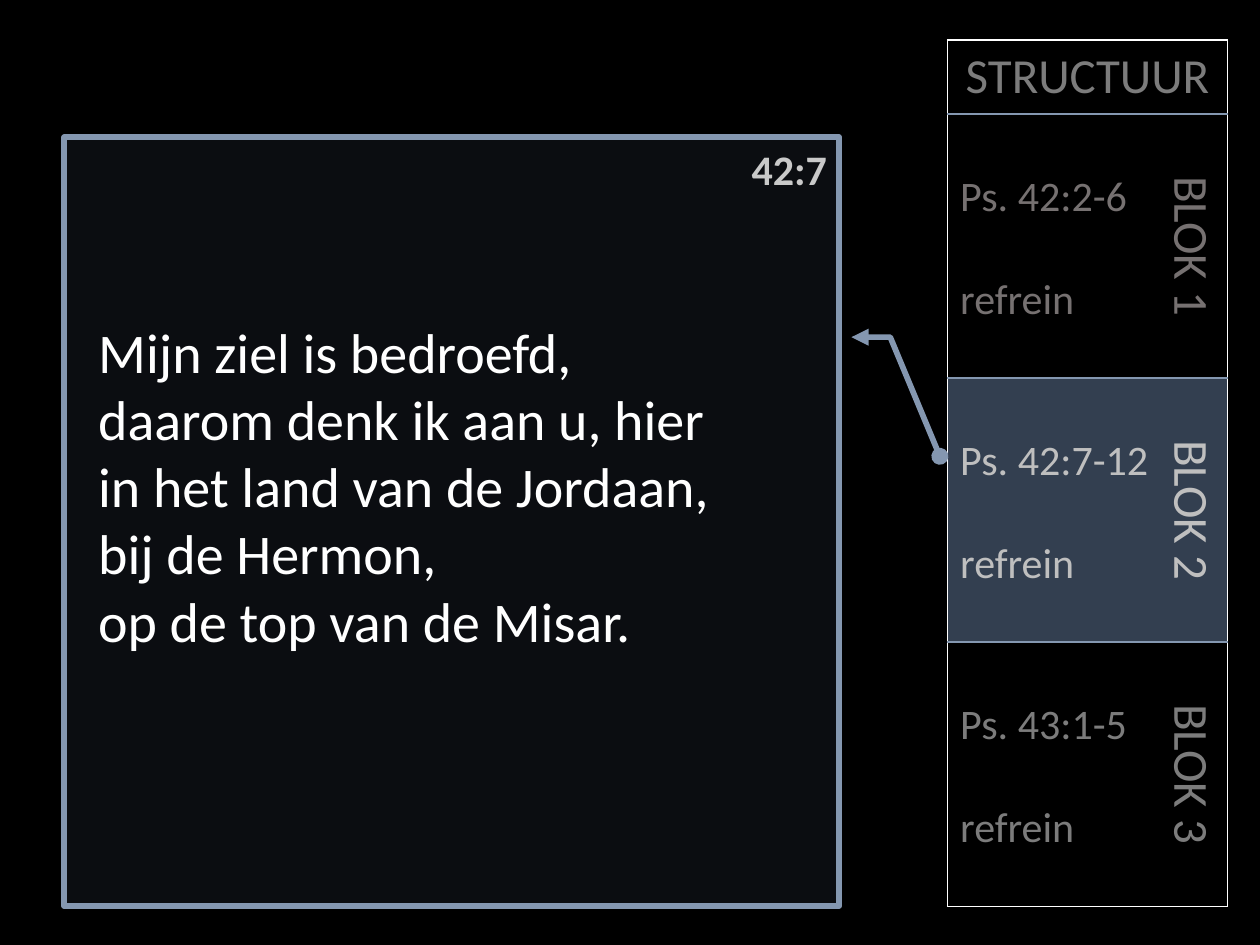
import pptx
import pptx.util
import pptx.dml.color
import pptx.enum.shapes
import pptx.enum.text
import pptx.oxml
import pptx.oxml.ns

Pt = pptx.util.Pt
RGBColor = pptx.dml.color.RGBColor
PP_ALIGN = pptx.enum.text.PP_ALIGN
MIDDLE = pptx.enum.text.MSO_ANCHOR.MIDDLE
qn = pptx.oxml.ns.qn

FONT = "Calibri"
BLACK = RGBColor(0x00, 0x00, 0x00)
WHITE = RGBColor(0xFF, 0xFF, 0xFF)
STEEL = RGBColor(0x84, 0x97, 0xB0)
PANEL = RGBColor(0x22, 0x2A, 0x35)
HIGHLIGHT = RGBColor(0x33, 0x3F, 0x50)
GREY = RGBColor(0x7C, 0x7C, 0x7C)
WARM_GREY = RGBColor(0x76, 0x71, 0x71)
LIGHT_GREY = RGBColor(0xBF, 0xBF, 0xBF)
VERSE_GREY = RGBColor(0xC9, 0xC9, 0xC9)

BLOCKS = [
    ("BLOK 1", "Ps. 42:2-6", WARM_GREY, None),
    ("BLOK 2", "Ps. 42:7-12", LIGHT_GREY, HIGHLIGHT),
    ("BLOK 3", "Ps. 43:1-5", GREY, None),
]
VERSE = [
    "Mijn ziel is bedroefd,",
    "daarom denk ik aan u, hier",
    "in het land van de Jordaan,",
    "bij de Hermon,",
    "op de top van de Misar.",
]
HEADER_HEIGHT, BLOCK_HEIGHT = 42.3, 150.9
LINE_HEIGHT = 29.3  # one line of 24 pt text


def write_lines(frame, lines, size, color, align=PP_ALIGN.LEFT, bold=False, gap=0):
    """Fill a text frame with one paragraph per line, gap points apart."""
    for index, line in enumerate(lines):
        paragraph = frame.paragraphs[0] if index == 0 else frame.add_paragraph()
        paragraph.text = line
        paragraph.alignment = align
        paragraph.space_before = Pt(gap if index else 0)
        font = paragraph.font
        font.name, font.size, font.bold = FONT, Pt(size), bold
        font.color.rgb = color


def add_text(slide, left, top, width, height, lines, size, color, **style):
    box = slide.shapes.add_textbox(Pt(left), Pt(top), Pt(width), Pt(height))
    box.text_frame.word_wrap = True
    write_lines(box.text_frame, lines, size, color, **style)


def set_borders(cell, **edges):
    """Draw the cell edges L, R, T and B in the given colours, or hide them."""
    properties = cell._tc.get_or_add_tcPr()
    for position, side in enumerate("LRTB"):
        color = edges.get(side)
        paint = (f'<a:solidFill><a:srgbClr val="{color}"/></a:solidFill>'
                 if color is not None else "<a:noFill/>")
        properties.insert(position, pptx.oxml.parse_xml(
            f'<a:ln{side} {pptx.oxml.ns.nsdecls("a")} w="{Pt(1)}">{paint}</a:ln{side}>'))


def add_structure_table(slide):
    table = slide.shapes.add_table(
        len(BLOCKS) + 1, 2, Pt(541.5), Pt(22.9), Pt(159.8),
        Pt(HEADER_HEIGHT + BLOCK_HEIGHT * len(BLOCKS))).table
    table.first_row = table.horz_banding = False
    table.columns[0].width, table.columns[1].width = Pt(127.4), Pt(32.4)
    table.rows[0].height = Pt(HEADER_HEIGHT)

    header = table.cell(0, 0)
    header.merge(table.cell(0, 1))
    write_lines(header.text_frame, ["STRUCTUUR"], 28, GREY, PP_ALIGN.CENTER)

    for row, (name, psalm, color, fill) in enumerate(BLOCKS, start=1):
        table.rows[row].height = Pt(BLOCK_HEIGHT)
        content, label = table.cell(row, 0), table.cell(row, 1)
        content.margin_top = Pt(3.6 + LINE_HEIGHT)
        write_lines(content.text_frame, [psalm, "refrein"], 24, color, gap=LINE_HEIGHT)
        write_lines(label.text_frame, [name], 28, color, PP_ALIGN.CENTER)
        label.vertical_anchor = MIDDLE
        label._tc.get_or_add_tcPr().set("vert", "vert")
        for cell in (content, label):
            if fill is not None:
                cell.fill.solid()
                cell.fill.fore_color.rgb = fill

    for row in range(len(BLOCKS) + 1):
        top = WHITE if row == 0 else STEEL
        bottom = WHITE if row == len(BLOCKS) else STEEL
        for column, outer in enumerate("LR"):
            cell = table.cell(row, column)
            if row == 0 or BLOCKS[row - 1][3] is None:
                cell.fill.background()
            edges = {"L": WHITE, "R": WHITE} if row == 0 else {outer: WHITE}
            set_borders(cell, T=top, B=bottom, **edges)


def add_verse_callout(slide):
    callout = slide.shapes.add_shape(
        pptx.enum.shapes.MSO_SHAPE.LINE_CALLOUT_2,
        Pt(36.7), Pt(78.5), Pt(442.8), Pt(439.2))
    callout.shadow.inherit = False
    for index, value in enumerate((0.26, 1.016, 0.26, 1.066, 0.415, 1.13)):
        callout.adjustments[index] = value
    callout.fill.solid()
    callout.fill.fore_color.rgb = PANEL
    tint = callout._element.spPr.find(qn("a:solidFill"))[0]
    tint.append(pptx.oxml.parse_xml(
        f'<a:alpha {pptx.oxml.ns.nsdecls("a")} val="33000"/>'))
    callout.line.color.rgb = STEEL
    callout.line.width = Pt(3.25)
    for end, kind in (("headEnd", "triangle"), ("tailEnd", "oval")):
        callout.line._get_or_add_ln().append(pptx.oxml.parse_xml(
            f'<a:{end} {pptx.oxml.ns.nsdecls("a")} type="{kind}"/>'))


def main():
    presentation = pptx.Presentation()
    presentation.slide_width, presentation.slide_height = Pt(720), Pt(540)
    slide = presentation.slides.add_slide(presentation.slide_layouts[6])
    slide.background.fill.solid()
    slide.background.fill.fore_color.rgb = BLACK

    add_structure_table(slide)
    add_verse_callout(slide)
    add_text(slide, 49, 177.8, 418.3, 239.8, VERSE, 32, WHITE)
    add_text(slide, 394.6, 78.5, 85, 36, ["42:7"], 24, VERSE_GREY,
             align=PP_ALIGN.RIGHT, bold=True)
    presentation.save("out.pptx")


if __name__ == "__main__":
    main()
